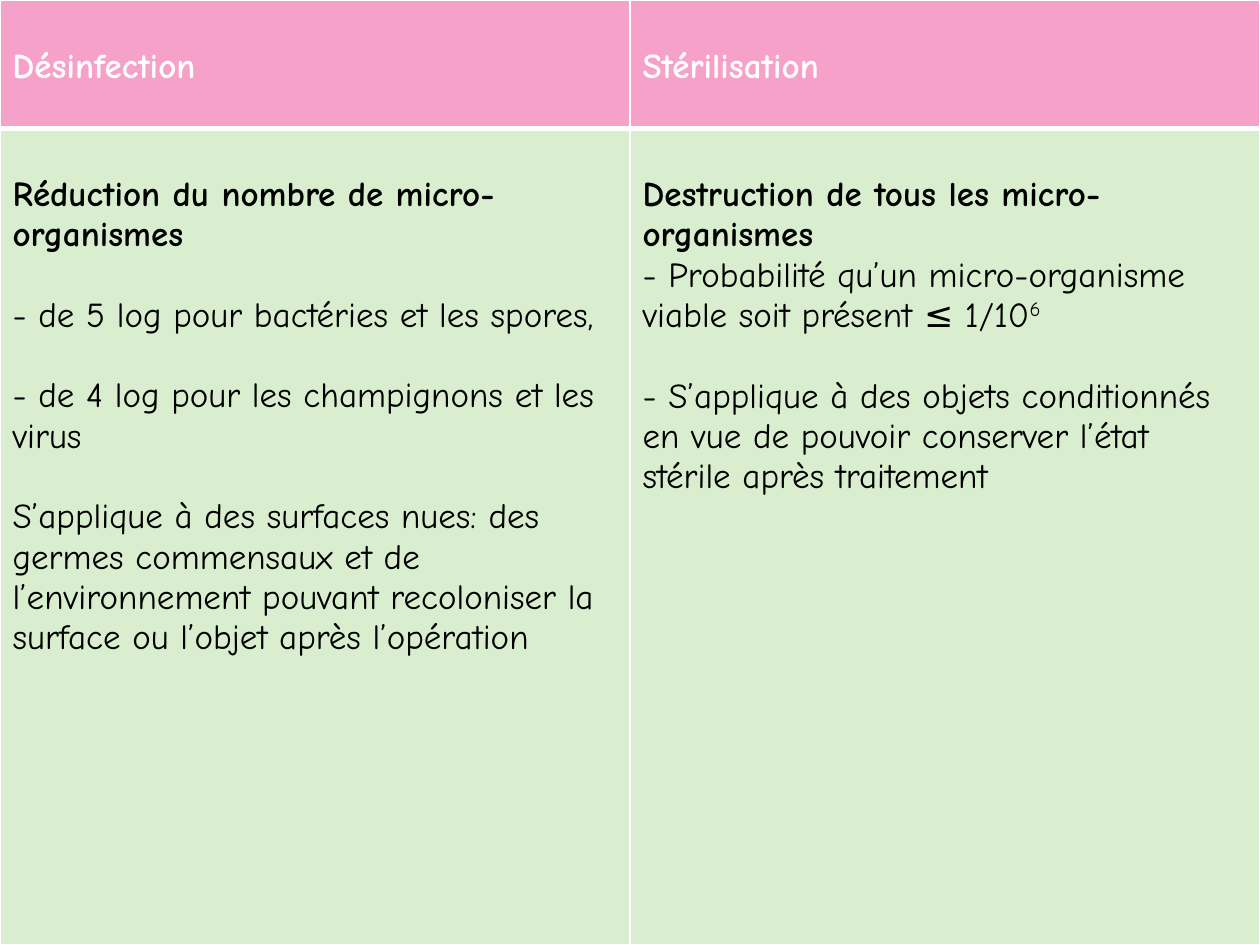
from lxml.etree import SubElement
from pptx import Presentation
from pptx.dml.color import RGBColor
from pptx.oxml.ns import qn
from pptx.util import Inches, Pt

COLORS = {"back": "000000", "head": "F6A1C9", "body": "D8EECE",
          "light": "FFFFFF", "dark": "000000"}
FONT = "Comic Neue"
SIZE = 20
LINE = 23
HEIGHTS = [1.02, 6.48]

HEADS = ["Désinfection", "Stérilisation"]
BODIES = [
    [
        ("Réduction du nombre de micro-organismes", "", True, 0),
        ("- de 5 log pour bactéries et les spores,", "", False, LINE),
        ("- de 4 log pour les champignons et les virus", "", False, LINE),
        ("S’applique à des surfaces nues: des germes commensaux et de "
         "l’environnement pouvant recoloniser la surface ou l’objet après "
         "l’opération", "", False, LINE),
    ],
    [
        ("Destruction de tous les micro-organismes", "", True, 0),
        ("- Probabilité qu’un micro-organisme viable soit présent ≤ 1/10",
         "6", False, 0),
        ("- S’applique à des objets conditionnés en vue de pouvoir conserver "
         "l’état stérile après traitement", "", False, LINE),
    ],
]
ROWS = [
    {"cells": [[(text, "", True, 0)] for text in HEADS],
     "fill": "head", "ink": "light", "edges": {"L": 1, "R": 1, "T": 1, "B": 3}},
    {"cells": BODIES,
     "fill": "body", "ink": "dark", "edges": {"L": 1, "R": 1, "T": 3, "B": 1}},
]


def color(name):
    return RGBColor.from_string(COLORS[name])


def border(cell, edges):
    props = cell._tc.get_or_add_tcPr()
    for side, width in edges.items():
        line = SubElement(props, qn(f"a:ln{side}"), w=str(Pt(width)))
        fill = SubElement(line, qn("a:solidFill"))
        SubElement(fill, qn("a:srgbClr"), val=COLORS["light"])


def add_run(para, text, bold, ink):
    run = para.add_run()
    run.text = text
    for key, value in {"name": FONT, "size": Pt(SIZE), "bold": bold}.items():
        setattr(run.font, key, value)
    run.font.color.rgb = color(ink)
    return run


def write(cell, paras, ink):
    cell.margin_top = Inches(0.05) + Pt(LINE)
    frame = cell.text_frame
    for i, (text, power, bold, gap) in enumerate(paras):
        para = frame.add_paragraph() if i else frame.paragraphs[0]
        para.space_before = Pt(gap)
        add_run(para, text, bold, ink)
        if power:
            run = add_run(para, power, bold, ink)
            run.font._element.set("baseline", "30000")


def main():
    deck = Presentation()
    deck.slide_width, deck.slide_height = Inches(10), Inches(7.5)
    slide = deck.slides.add_slide(deck.slide_layouts[6])
    slide.background.fill.solid()
    slide.background.fill.fore_color.rgb = color("back")

    table = slide.shapes.add_table(len(ROWS), len(HEADS), 0, 0,
                                   deck.slide_width, deck.slide_height).table
    table.first_row = table.horz_banding = False
    for r, row in enumerate(ROWS):
        table.rows[r].height = Inches(HEIGHTS[r])
        for c, paras in enumerate(row["cells"]):
            cell = table.cell(r, c)
            border(cell, row["edges"])
            cell.fill.solid()
            cell.fill.fore_color.rgb = color(row["fill"])
            write(cell, paras, row["ink"])
    deck.save("out.pptx")


if __name__ == "__main__":
    main()
